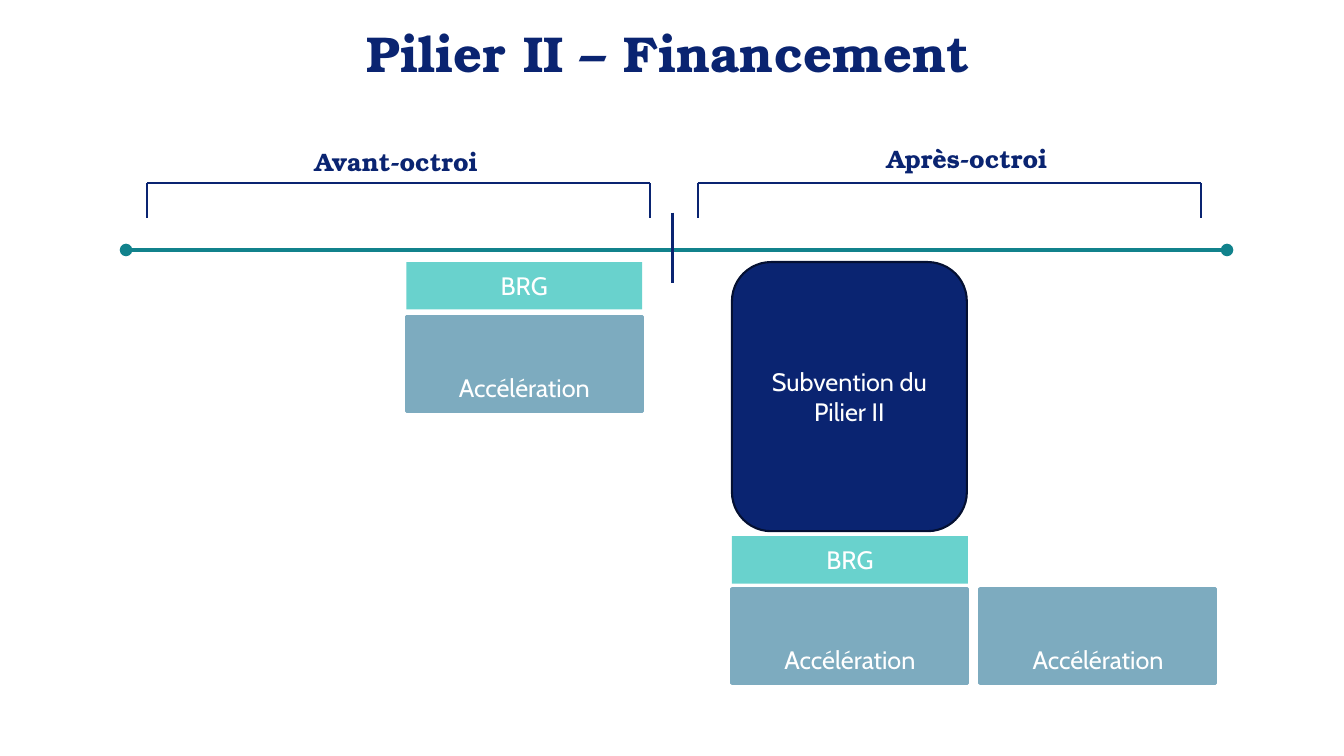
from pptx import Presentation
from pptx.dml.color import RGBColor
from pptx.enum.dml import MSO_PATTERN
from pptx.enum.shapes import MSO_CONNECTOR, MSO_SHAPE
from pptx.enum.text import MSO_ANCHOR, PP_ALIGN
from pptx.oxml.ns import qn
from pptx.util import Pt
from lxml.etree import SubElement

PX = 9144  # 100 px to the inch
COLORS = {"navy": "0A2471", "edge": "041032", "teal": "11828C",
          "mint": "69D2CD", "steel": "7DABBF", "white": "FFFFFF"}
SERIF, SANS = "TeX Gyre Bonum", "Cabin"

TITLE = ("Pilier II – Financement", (88, 24, 1150, 83), 36)
LABELS = [("Avant-octroi", (293, 140, 200, 40), 18),
          ("Après-octroi", (859, 137, 200, 40), 18)]
AXIS = (125, 248, 1217, 248)
MARK = (667, 211, 667, 281)
BRACES = [146, 692]
SPAN, TOP, FOOT = 499, 182, 216
GRANT = ("Subvention du Pilier II", (726, 260, 233, 267))
WIDE, HIGH = 234, 47
BRG = [(403, 260), (726, 532)]
ACCEL = [(403, 314, "white"), (972, 584, "white"), (726, 584, "navy")]


def rgb(name):
    return RGBColor.from_string(COLORS[name])


def emu(box):
    return [n * PX for n in box]


def write(shape, text, font, size, color, bold=False):
    frame = shape.text_frame
    frame.word_wrap = True
    para = frame.paragraphs[0]
    para.text = text
    para.alignment = PP_ALIGN.CENTER
    face = para.runs[0].font
    face.name, face.size, face.bold = font, Pt(size), bold
    face.color.rgb = rgb(color)
    return para


def head(text, box, size):
    shape = slide.shapes.add_textbox(*emu(box))
    return write(shape, text, SERIF, size, "navy", True)


def line(ends, color="navy", width=1.5, dots=False):
    link = slide.shapes.add_connector(MSO_CONNECTOR.STRAIGHT, *emu(ends))
    link.line.color.rgb = rgb(color)
    link.line.width = Pt(width)
    if dots:
        for tag in ("a:headEnd", "a:tailEnd"):
            SubElement(link.line._get_or_add_ln(), qn(tag), type="oval")
    SubElement(link._element.spPr, qn("a:effectLst"))


def block(box, fill, text="", edge=None, width=2.25, kind=MSO_SHAPE.RECTANGLE, back=None):
    """Draw a filled shape; back sets the second colour of a striped fill."""
    shape = slide.shapes.add_shape(kind, *emu(box))
    shape.shadow.inherit = False
    if back:
        shape.fill.patterned()
        shape.fill.pattern = MSO_PATTERN.DARK_VERTICAL
        shape.fill.fore_color.rgb = rgb(fill)
        shape.fill.back_color.rgb = rgb(back)
    else:
        shape.fill.solid()
        shape.fill.fore_color.rgb = rgb(fill)
    if edge:
        shape.line.color.rgb = rgb(edge)
        shape.line.width = Pt(width)
    else:
        shape.line.fill.background()
    if text:
        shape.text_frame.vertical_anchor = MSO_ANCHOR.MIDDLE
        write(shape, text, SANS, 18, "white")


deck = Presentation()
deck.slide_width, deck.slide_height = emu((1333, 750))
slide = deck.slides.add_slide(deck.slide_layouts[6])

head(*TITLE).line_spacing = 0.9
for label in LABELS:
    head(*label)

line(AXIS, "teal", 3, dots=True)
line(MARK)
for left in BRACES:
    right = left + SPAN
    for x in (left, right):
        line((x, FOOT, x, TOP))
    line((left, TOP, right, TOP))

block(GRANT[1], "navy", GRANT[0], "edge", 1.5, MSO_SHAPE.ROUNDED_RECTANGLE)
for x, y in BRG:
    block((x, y, WIDE, HIGH), "mint", "BRG")
for x, y, back in ACCEL:
    block((x, y, WIDE, HIGH), "steel", edge="steel", back=back)
    block((x, y + HIGH, WIDE, HIGH), "steel", "Accélération", "steel")

deck.save("out.pptx")
